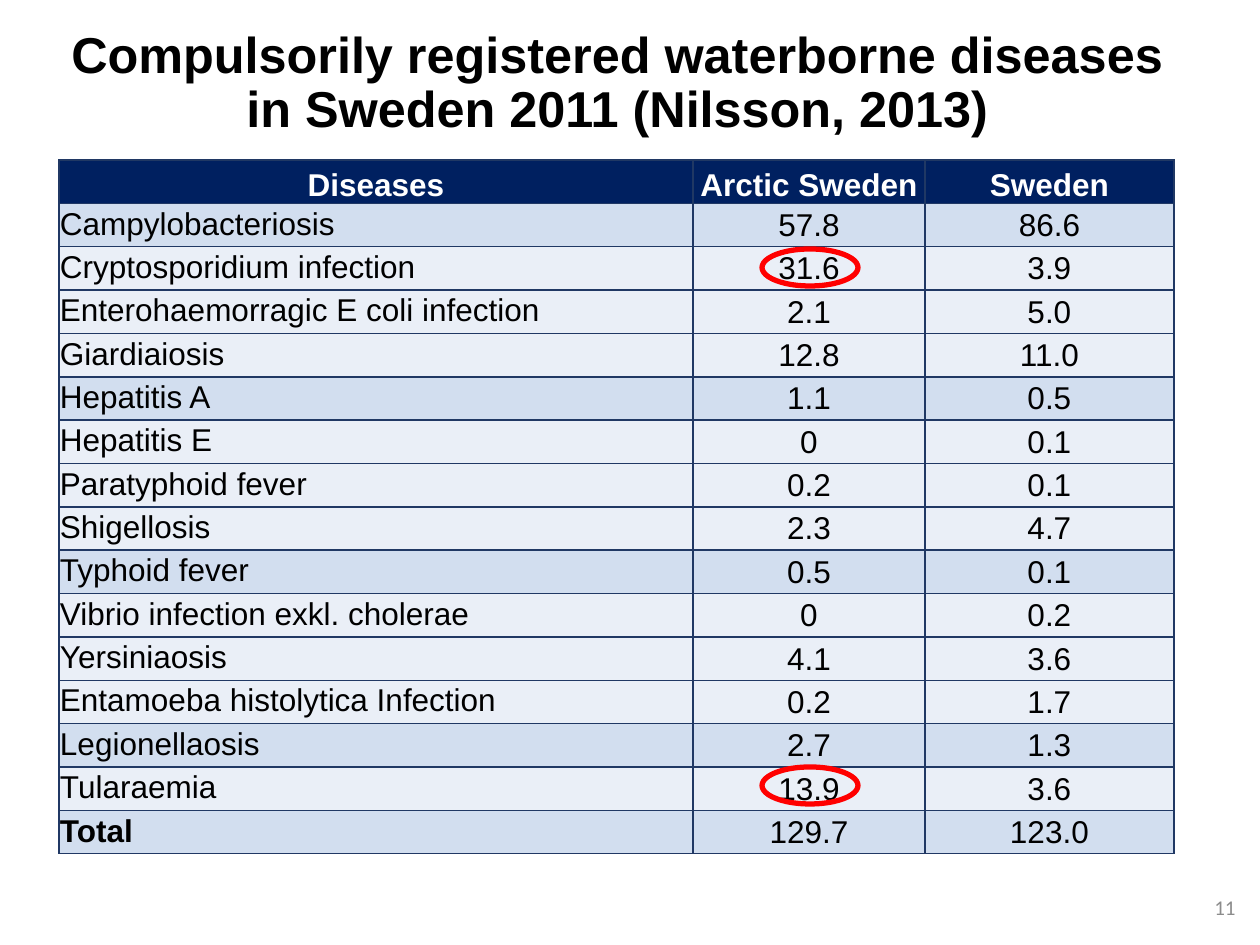
from dataclasses import dataclass

from lxml import etree
from pptx import Presentation
from pptx.dml.color import RGBColor
from pptx.enum.shapes import MSO_SHAPE
from pptx.enum.text import MSO_ANCHOR, MSO_AUTO_SIZE, PP_ALIGN
from pptx.oxml.ns import qn
from pptx.util import Emu, Pt

EMU_PER_PX = 914400 / 126
TITLE_ONLY = 5
LEFT, CENTER, RIGHT = PP_ALIGN.LEFT, PP_ALIGN.CENTER, PP_ALIGN.RIGHT
TOP, MIDDLE, BOTTOM = MSO_ANCHOR.TOP, MSO_ANCHOR.MIDDLE, MSO_ANCHOR.BOTTOM
OVAL = MSO_SHAPE.OVAL


@dataclass(frozen=True)
class Theme:
    font: str = "Arial"
    number_font: str = "Calibri"
    ink: str = "000000"
    white: str = "FFFFFF"
    muted: str = "8C8C8C"
    header: str = "002060"
    band_dark: str = "D2DEEF"
    band_light: str = "EAEFF7"
    border: str = "203864"
    highlight: str = "FF0000"
    title_size: float = 28.8
    table_size: float = 18
    number_size: float = 12


@dataclass(frozen=True)
class Box:
    left: int
    top: int
    width: int
    height: int


@dataclass(frozen=True)
class Disease:
    name: str
    arctic: str
    sweden: str


THEME = Theme()
TITLE = "Compulsorily registered waterborne diseases in Sweden 2011 (Nilsson, 2013)"
TITLE_BOX = Box(34, 30, 1167, 131)
TABLE_BOX = Box(59, 160, 1115, 694)
NUMBER_BOX = Box(964, 882, 284, 50)
COLUMN_WIDTHS = (634, 232, 249)
HEADINGS = ("Diseases", "Arctic Sweden", "Sweden")
DISEASES = (
    Disease("Campylobacteriosis", "57.8", "86.6"),
    Disease("Cryptosporidium infection", "31.6", "3.9"),
    Disease("Enterohaemorragic E coli infection", "2.1", "5.0"),
    Disease("Giardiaiosis", "12.8", "11.0"),
    Disease("Hepatitis A", "1.1", "0.5"),
    Disease("Hepatitis E", "0", "0.1"),
    Disease("Paratyphoid fever", "0.2", "0.1"),
    Disease("Shigellosis", "2.3", "4.7"),
    Disease("Typhoid fever", "0.5", "0.1"),
    Disease("Vibrio infection exkl. cholerae", "0", "0.2"),
    Disease("Yersiniaosis", "4.1", "3.6"),
    Disease("Entamoeba histolytica Infection", "0.2", "1.7"),
    Disease("Legionellaosis", "2.7", "1.3"),
    Disease("Tularaemia", "13.9", "3.6"),
    Disease("Total", "129.7", "123.0"),
)
HIGHLIGHTS = (Box(762, 249, 96, 37), Box(762, 767, 96, 37))


def px(length: float) -> Emu:
    return Emu(round(length * EMU_PER_PX))


def place(shape, box: Box) -> None:
    shape.left, shape.top = px(box.left), px(box.top)
    shape.width, shape.height = px(box.width), px(box.height)


def write(frame, text: str, size: float, color: str, align, bold: bool = False,
          font: str = THEME.font):
    """Set one formatted paragraph and return it."""
    frame.text = text
    para = frame.paragraphs[0]
    para.alignment = align
    for span in para.runs:
        span.font.name, span.font.size, span.font.bold = font, Pt(size), bold
        span.font.color.rgb = RGBColor.from_string(color)
    return para


def add_borders(cell) -> None:
    properties = cell._tc.get_or_add_tcPr()
    for index, side in enumerate(("lnL", "lnR", "lnT", "lnB")):
        line = etree.Element(qn(f"a:{side}"), w=str(Pt(1)))
        fill = etree.SubElement(line, qn("a:solidFill"))
        etree.SubElement(fill, qn("a:srgbClr"), val=THEME.border)
        properties.insert(index, line)


def style_cell(cell, fill: str, anchor) -> None:
    cell.fill.solid()
    cell.fill.fore_color.rgb = RGBColor.from_string(fill)
    cell.vertical_anchor = anchor
    cell.margin_left = cell.margin_right = cell.margin_top = px(1)
    cell.margin_bottom = 0
    add_borders(cell)


def add_title(page) -> None:
    title = page.shapes.title
    place(title, TITLE_BOX)
    frame = title.text_frame
    frame.auto_size = MSO_AUTO_SIZE.NONE
    frame.word_wrap = True
    frame.vertical_anchor = TOP
    frame.margin_top = 0
    para = write(frame, TITLE, THEME.title_size, THEME.ink, CENTER, bold=True)
    para.line_spacing = 0.9


def add_disease_table(page) -> None:
    row_count = len(DISEASES) + 1
    frame = page.shapes.add_table(row_count, len(HEADINGS), 0, 0, px(1), px(1))
    place(frame, TABLE_BOX)
    table = frame.table
    for column, width in zip(table.columns, COLUMN_WIDTHS):
        column.width = px(width)
    for row in table.rows:
        row.height = px(TABLE_BOX.height / row_count)

    for column, heading in enumerate(HEADINGS):
        cell = table.cell(0, column)
        style_cell(cell, THEME.header, BOTTOM)
        write(cell.text_frame, heading, THEME.table_size, THEME.white, CENTER, bold=True)

    for row, disease in enumerate(DISEASES, start=1):
        is_total = row == len(DISEASES)
        fill = THEME.band_dark if row % 4 == 1 or is_total else THEME.band_light
        for column, text in enumerate((disease.name, disease.arctic, disease.sweden)):
            cell = table.cell(row, column)
            style_cell(cell, fill, MIDDLE)
            is_name = column == 0
            para = write(cell.text_frame, text, THEME.table_size, THEME.ink,
                         LEFT if is_name else CENTER, bold=is_name and is_total)
            if is_name:
                para.line_spacing = 0.9
                para.space_before = Pt(10)


def add_highlight(page, box: Box) -> None:
    ring = page.shapes.add_shape(OVAL, 0, 0, px(1), px(1))
    place(ring, box)
    ring.shadow.inherit = False
    ring.fill.background()
    ring.line.color.rgb = RGBColor.from_string(THEME.highlight)
    ring.line.width = Pt(3)


def add_page_number(page, number: str) -> None:
    box = page.shapes.add_textbox(0, 0, px(1), px(1))
    place(box, NUMBER_BOX)
    box.text_frame.word_wrap = True
    box.text_frame.vertical_anchor = MIDDLE
    write(box.text_frame, number, THEME.number_size, THEME.muted, RIGHT,
          font=THEME.number_font)


def main() -> None:
    deck = Presentation()
    deck.slide_width, deck.slide_height = px(1260), px(945)
    page = deck.slides.add_slide(deck.slide_layouts[TITLE_ONLY])
    add_title(page)
    add_disease_table(page)
    for box in HIGHLIGHTS:
        add_highlight(page, box)
    add_page_number(page, "11")
    deck.save("out.pptx")


if __name__ == "__main__":
    main()
